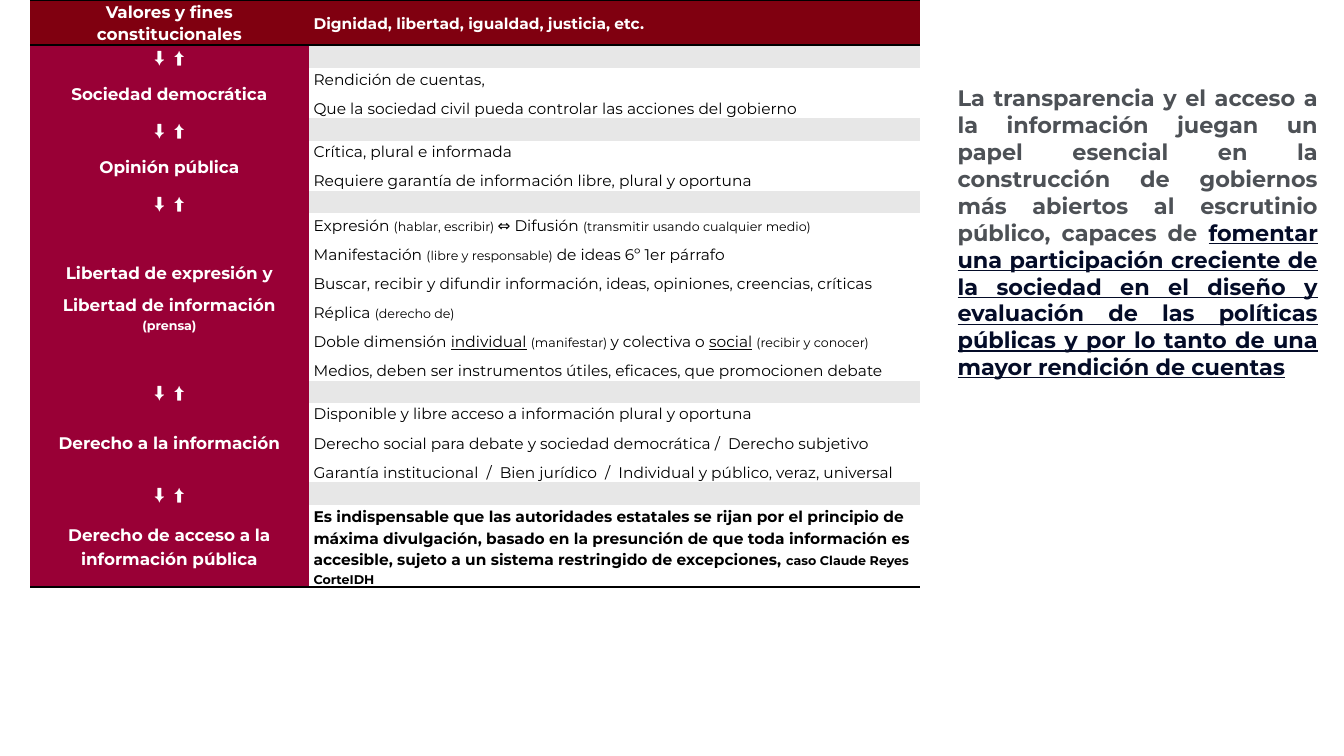
from lxml.etree import SubElement
from pptx import Presentation
from pptx.dml.color import RGBColor
from pptx.enum.text import MSO_ANCHOR, MSO_AUTO_SIZE, PP_ALIGN
from pptx.oxml.ns import qn
from pptx.util import Pt

COLORS = {
    "heading": "800010", "concept": "990036", "separator": "E7E7E7",
    "white": "FFFFFF", "black": "000000", "quote": "4D5156", "emphasis": "040C28",
}
NO_STYLE = "{2D5ABB26-0587-4C30-8999-92F81FD0307C}"
NOTE = {"size": 9}
UNDERLINED = {"underline": True}
EMPHASIS = {"underline": True, "color": "emphasis"}

# Each row: concept paragraphs, detail paragraphs, height, spacing of the first line.
# A paragraph is a list of runs; a run is a text or a (text, style) pair.
HEADING = ([["Valores y fines constitucionales"]],
           [["Dignidad, libertad, igualdad, justicia, etc."]], 44, 1.1)
SEPARATOR = ([["⬇  ⬆"]], [], 22, 1.1)
CONCEPTS = [
    ([["Sociedad democrática"]],
     [["Rendición de cuentas,"],
      ["Que la sociedad civil pueda controlar las acciones del gobierno"]], 50, 1.15),
    ([["Opinión pública"]],
     [["Crítica, plural e informada"],
      ["Requiere garantía de información libre, plural y oportuna"]], 49, 1.1),
    ([["Libertad de expresión y"], ["Libertad de información ", ("(prensa)", NOTE)]],
     [["Expresión ", ("(hablar, escribir) ", NOTE), "⇔ Difusión ",
       ("(transmitir usando cualquier medio)", NOTE)],
      ["Manifestación ", ("(libre y responsable)", NOTE), " de ideas 6º 1er párrafo"],
      ["Buscar, recibir y difundir información, ideas, opiniones, creencias, críticas"],
      ["Réplica ", ("(derecho de)", NOTE)],
      ["Doble dimensión ", ("individual", UNDERLINED), " ", ("(manifestar) ", NOTE),
       "y colectiva o ", ("social", UNDERLINED), " ", ("(recibir y conocer)", NOTE)],
      ["Medios, deben ser instrumentos útiles, eficaces, que promocionen debate"]],
     163, 1.15),
    ([["Derecho a la información"]],
     [["Disponible y libre acceso a información plural y oportuna"],
      ["Derecho social para debate y sociedad democrática /  Derecho subjetivo"],
      ["Garantía institucional  /  Bien jurídico  /  Individual y público, veraz, universal"]],
     77, 1.1),
    ([["Derecho de acceso a la información pública"]],
     [["Es indispensable que las autoridades estatales se rijan por el principio de "
       "máxima divulgación, basado en la presunción de que toda información es "
       "accesible, sujeto a un sistema restringido de excepciones, ",
       ("caso Claude Reyes CorteIDH", NOTE)]], 80, 1.15),
]
QUOTE = [[
    "La transparencia y el acceso a la información juegan un papel esencial en la "
    "construcción de gobiernos más abiertos al escrutinio público, capaces de ",
    ("fomentar una participación creciente de la sociedad en el diseño y evaluación "
     "de las políticas públicas y por lo tanto de una mayor rendición de cuentas", EMPHASIS),
]]


class SlideBuilder:
    FONT = "Montserrat"
    EMU_PER_PX = 9144

    def __init__(self, width, height):
        self.presentation = Presentation()
        self.presentation.slide_width = self.px(width)
        self.presentation.slide_height = self.px(height)
        self.slide = self.presentation.slides.add_slide(self.presentation.slide_layouts[6])

    def px(self, length):
        return length * self.EMU_PER_PX

    def color(self, name):
        return RGBColor.from_string(COLORS[name])

    def fill_text(self, text_frame, paragraphs, size, color, bold, align, spacings, gap=0):
        for index, runs in enumerate(paragraphs):
            paragraph = text_frame.add_paragraph() if index else text_frame.paragraphs[0]
            paragraph.alignment = align
            paragraph.line_spacing = spacings[min(index, len(spacings) - 1)]
            paragraph.space_before = Pt(gap if index else 0)
            for item in runs:
                text, style = (item, {}) if isinstance(item, str) else item
                run = paragraph.add_run()
                run.text = text
                run.font.name = self.FONT
                run.font.size = Pt(style.get("size", size))
                run.font.bold = bold
                run.font.color.rgb = self.color(style.get("color", color))
                if style.get("underline"):
                    run.font.underline = True

    def text_box(self, left, top, width, height, paragraphs, size, color):
        shape = self.slide.shapes.add_textbox(*map(self.px, (left, top, width, height)))
        text_frame = shape.text_frame
        text_frame.word_wrap = True
        text_frame.auto_size = MSO_AUTO_SIZE.SHAPE_TO_FIT_TEXT
        self.fill_text(text_frame, paragraphs, size, color, True, PP_ALIGN.JUSTIFY, [1.0])

    def border(self, cell, tag):
        line = SubElement(cell._tc.get_or_add_tcPr(), qn(tag), w=str(Pt(2)))
        fill = SubElement(line, qn("a:solidFill"))
        SubElement(fill, qn("a:srgbClr"), val=COLORS["black"])

    def cell(self, cell, fill, borders, paragraphs, **text_style):
        cell.margin_left = cell.margin_right = self.px(5)
        cell.margin_top = cell.margin_bottom = 0
        cell.vertical_anchor = MSO_ANCHOR.MIDDLE
        for tag in borders:
            self.border(cell, tag)
        cell.fill.solid()
        cell.fill.fore_color.rgb = self.color(fill)
        if paragraphs:
            self.fill_text(cell.text_frame, paragraphs, gap=6, **text_style)
        else:  # keeps the empty line from stretching the row
            SubElement(cell.text_frame.paragraphs[0]._p, qn("a:endParaRPr"), sz="900")

    def concept_table(self, left, top, widths, rows):
        height = sum(row[2] for row in rows)
        frame = self.slide.shapes.add_table(
            len(rows), len(widths), *map(self.px, (left, top, sum(widths), height)))
        table = frame.table
        table.first_row = table.horz_banding = False
        table._tbl.tblPr.find(qn("a:tableStyleId")).text = NO_STYLE
        for column, width in zip(table.columns, widths):
            column.width = self.px(width)
        last = len(rows) - 1
        for index, (concept, details, height, lead) in enumerate(rows):
            table.rows[index].height = self.px(height)
            is_heading = index == 0
            borders = ["a:lnT", "a:lnB"] if is_heading else ["a:lnB"] if index == last else []
            self.cell(table.cell(index, 0), "heading" if is_heading else "concept",
                      borders, concept, size=12, color="white", bold=True,
                      align=PP_ALIGN.CENTER, spacings=[lead])
            fill = "heading" if is_heading else "white" if details else "separator"
            self.cell(table.cell(index, 1), fill, borders, details, size=11,
                      color="white" if is_heading else "black",
                      bold=index in (0, last), align=PP_ALIGN.LEFT, spacings=[lead, 1.1])


def main():
    builder = SlideBuilder(1333, 750)
    rows = [HEADING]
    for concept in CONCEPTS:
        rows += [SEPARATOR, concept]
    builder.concept_table(30, 0, [276, 607], rows)
    builder.text_box(940, 79, 377, 306, QUOTE, 16, "quote")
    builder.presentation.save("out.pptx")


if __name__ == "__main__":
    main()
